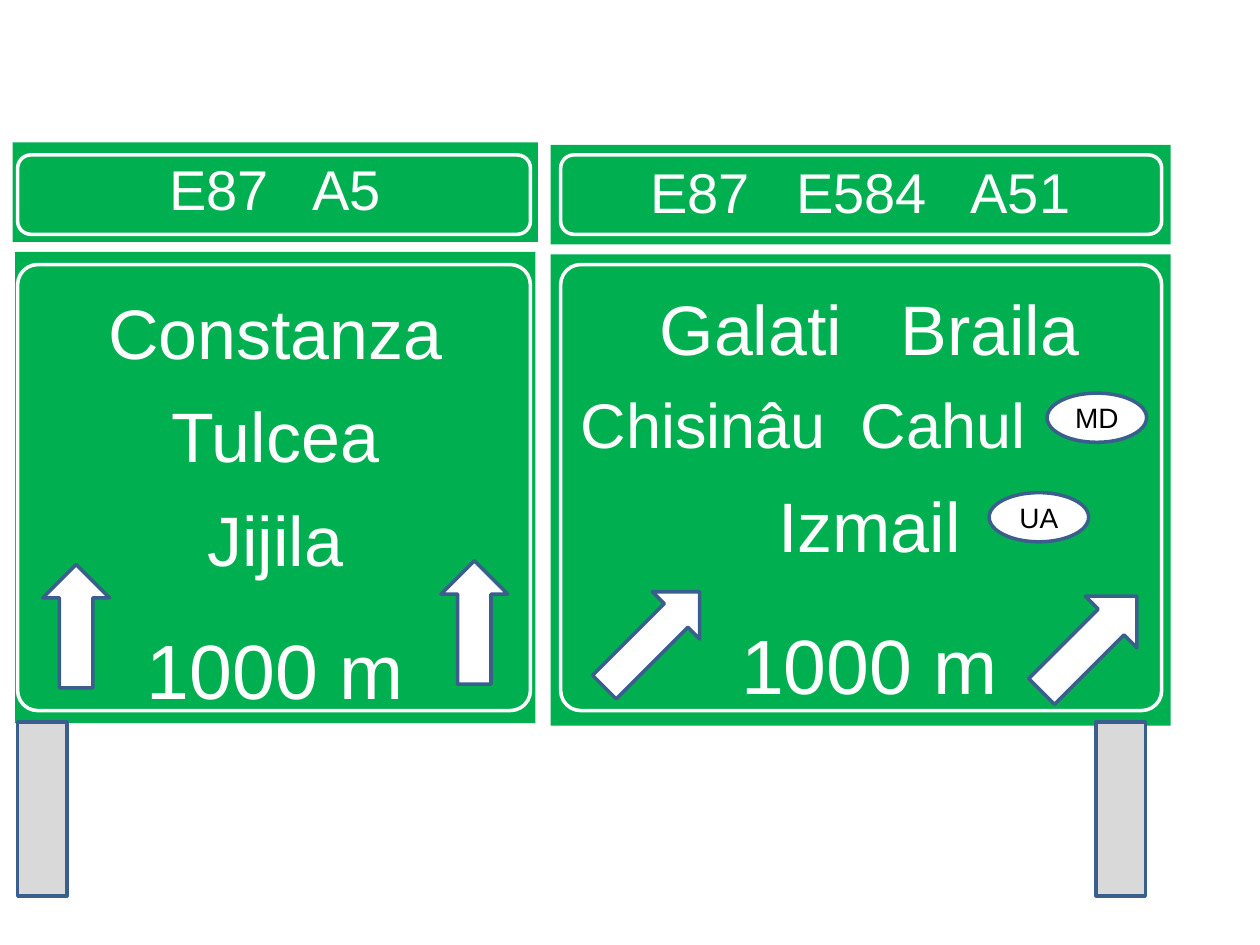
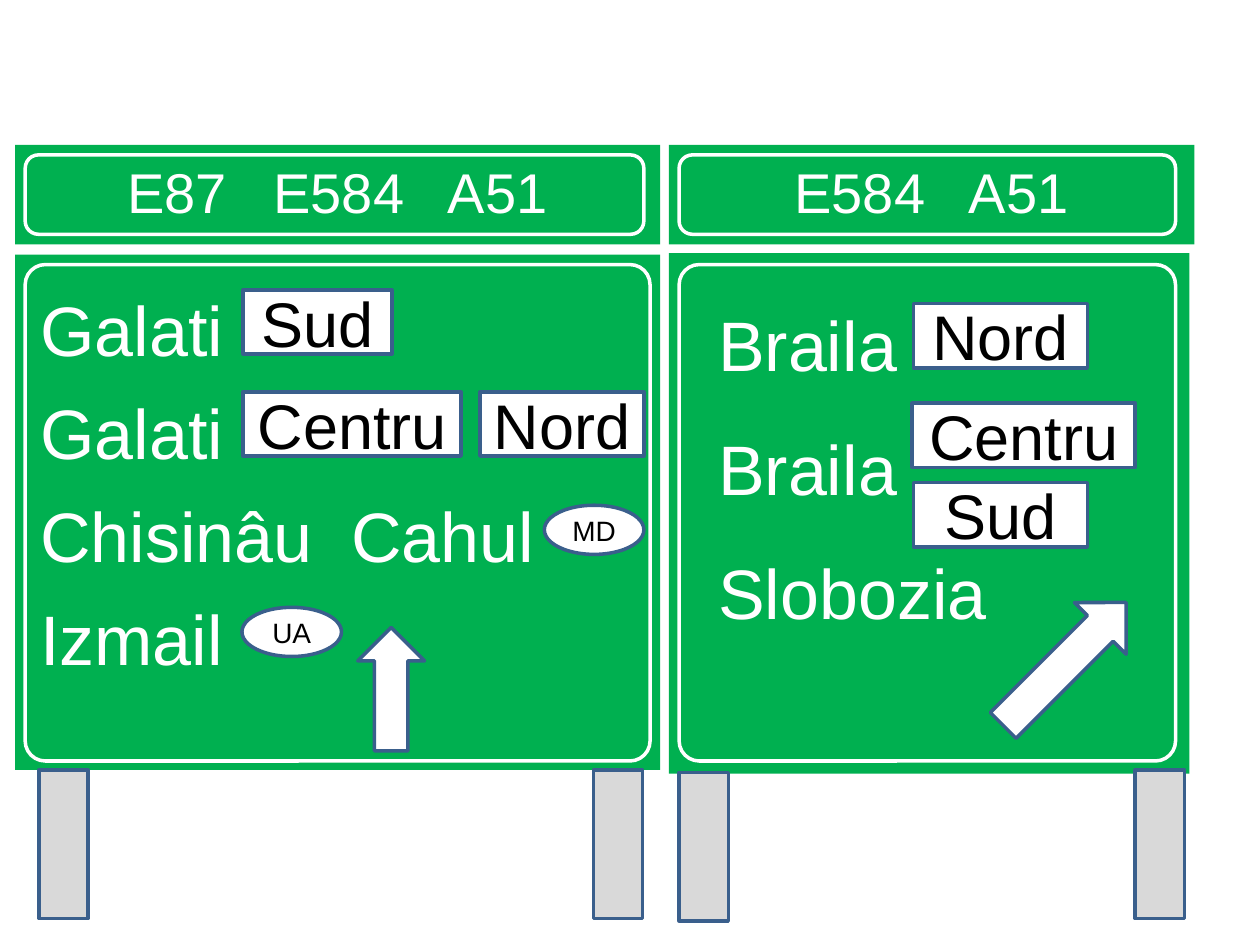
from dataclasses import dataclass

from pptx import Presentation
from pptx.dml.color import RGBColor
from pptx.enum.shapes import MSO_SHAPE as Preset
from pptx.enum.text import MSO_ANCHOR as Anchor, PP_ALIGN as Align
from pptx.util import Inches, Pt


@dataclass(frozen=True)
class Theme:
    green: str = "00B050"
    white: str = "FFFFFF"
    black: str = "000000"
    post: str = "D9D9D9"
    outline: str = "3A5F8C"
    font: str = "Arial"
    route_size: int = 32
    place_size: int = 40
    small_place_size: int = 36
    distance_size: int = 44
    district_size: int = 36
    country_size: int = 16
    line_width: int = 2
    corner_radius: float = 0.16


@dataclass(frozen=True)
class Box:
    left: float
    top: float
    width: float
    height: float

    def inner(self, left, top, width, height):
        """Return a box whose position is measured from this one."""
        return Box(self.left + left, self.top + top, width, height)


@dataclass(frozen=True)
class Line:
    text: str
    size: int = 40
    before: float = 0
    align: Align = Align.CENTER


THEME = Theme()
ROUTE_HEIGHT = 0.79
ROUTE_FRAME_HEIGHT = 0.63
POST_WIDTH = 0.39


def add_preset(slide, preset, box, fill=None, line=None):
    shape = slide.shapes.add_shape(
        preset, Inches(box.left), Inches(box.top), Inches(box.width), Inches(box.height))
    shape.shadow.inherit = False
    if fill:
        shape.fill.solid()
        shape.fill.fore_color.rgb = RGBColor.from_string(fill)
    else:
        shape.fill.background()
    if line:
        shape.line.color.rgb = RGBColor.from_string(line)
        shape.line.width = Pt(THEME.line_width)
    else:
        shape.line.fill.background()
    return shape


def write_lines(shape, lines, color, anchor, insets=(0, 0, 0, 0)):
    frame = shape.text_frame
    frame.word_wrap = True
    frame.vertical_anchor = anchor
    (frame.margin_left, frame.margin_top,
     frame.margin_right, frame.margin_bottom) = map(Inches, insets)
    for index, line in enumerate(lines):
        paragraph = frame.add_paragraph() if index else frame.paragraphs[0]
        paragraph.alignment = line.align
        paragraph.space_before = Pt(line.before)
        run = paragraph.add_run()
        run.text = line.text
        run.font.name = THEME.font
        run.font.size = Pt(line.size)
        run.font.color.rgb = RGBColor.from_string(color)


def add_frame(slide, box, radius=None):
    """Draw the rounded white border of a plate."""
    frame = add_preset(slide, Preset.ROUNDED_RECTANGLE, box, line=THEME.white)
    if radius:
        frame.adjustments[0] = radius / min(box.width, box.height)


def add_route_plate(slide, box, frame_left, frame_top, frame_width, routes):
    plate = add_preset(slide, Preset.RECTANGLE, box, THEME.green)
    write_lines(plate, [Line(routes, THEME.route_size)], THEME.white,
                Anchor.BOTTOM, (0.1, 0.05, 0.1, 0.16))
    add_frame(slide, box.inner(frame_left, frame_top, frame_width, ROUTE_FRAME_HEIGHT))


def add_direction_plate(slide, box, frame, lines, left_inset, top_inset):
    plate = add_preset(slide, Preset.RECTANGLE, box, THEME.green)
    write_lines(plate, lines, THEME.white, Anchor.TOP, (left_inset, top_inset, 0.1, 0))
    add_frame(slide, box.inner(*frame), THEME.corner_radius)


def add_outlined(slide, preset, box, fill=THEME.white):
    return add_preset(slide, preset, box, fill, THEME.outline)


def add_up_arrow(slide, plate, left, top):
    add_outlined(slide, Preset.UP_ARROW, plate.inner(left, top, 0.53, 0.98))


def add_exit_arrow(slide, plate, left, top, width, height):
    arrow = add_outlined(slide, Preset.RIGHT_ARROW, plate.inner(left, top, width, height))
    arrow.rotation = 315


def add_country(slide, plate, left, top, code):
    badge = add_outlined(slide, Preset.OVAL, plate.inner(left, top, 0.79, 0.39))
    write_lines(badge, [Line(code, THEME.country_size)], THEME.black, Anchor.MIDDLE)


def add_district(slide, plate, left, top, width, name):
    label = add_outlined(slide, Preset.RECTANGLE, plate.inner(left, top, width, 0.51))
    write_lines(label, [Line(name, THEME.district_size)], THEME.black, Anchor.MIDDLE)


def add_post(slide, plate, left, top, height):
    add_outlined(slide, Preset.RECTANGLE,
                 plate.inner(left, top, POST_WIDTH, height), THEME.post)


def add_constanza_sign(slide, plate):
    add_route_plate(slide, plate.inner(-0.02, -0.87, 4.17, ROUTE_HEIGHT),
                    0.04, 0.1, 4.07, "E87   A5")
    places = [Line(name, THEME.place_size, 11 if index else 0)
              for index, name in enumerate(("Constanza", "Tulcea", "Jijila"))]
    add_direction_plate(slide, plate, (0.02, 0.1, 4.07, 3.54),
                        places + [Line("1000 m", THEME.distance_size, 24)], 0.1, 0.3)
    add_up_arrow(slide, plate, 0.22, 2.48)
    add_up_arrow(slide, plate, 3.38, 2.45)
    add_post(slide, plate, 0.02, 3.73, 1.38)


def add_galati_braila_sign(slide, plate):
    add_route_plate(slide, plate.inner(0, -0.87, plate.width, ROUTE_HEIGHT),
                    0.08, 0.08, 4.77, "E87   E584   A51")
    lines = [
        Line("Galati   Braila", THEME.place_size),
        Line("Chisinâu  Cahul", THEME.small_place_size, 9, Align.LEFT),
        Line("Izmail", THEME.place_size, 12),
        Line("1000 m", THEME.distance_size, 29),
    ]
    add_direction_plate(slide, plate, (0.08, 0.08, 4.77, 3.54), lines, 0.24, 0.25)
    add_exit_arrow(slide, plate, 0.27, 2.79, 1.07, 0.53)
    add_exit_arrow(slide, plate, 3.74, 2.8, 1.07, 0.58)
    add_country(slide, plate, 3.94, 1.1, "MD")
    add_country(slide, plate, 3.48, 1.89, "UA")
    add_post(slide, plate, 4.33, 3.71, 1.38)


def add_galati_sign(slide, plate):
    add_route_plate(slide, plate.inner(0, -0.87, plate.width, ROUTE_HEIGHT),
                    0.08, 0.08, 4.91, "E87   E584   A51")
    names = ("Galati", "Galati", "Chisinâu  Cahul", "Izmail")
    lines = [Line(name, THEME.place_size, 11 if index else 0, Align.LEFT)
             for index, name in enumerate(names)]
    add_direction_plate(slide, plate, (0.08, 0.08, 4.96, 3.94), lines, 0.2, 0.25)
    add_district(slide, plate, 1.81, 0.28, 1.18, "Sud")
    add_district(slide, plate, 1.81, 1.09, 1.73, "Centru")
    add_district(slide, plate, 3.69, 1.09, 1.3, "Nord")
    add_country(slide, plate, 4.2, 1.99, "MD")
    add_country(slide, plate, 1.8, 2.8, "UA")
    add_up_arrow(slide, plate, 2.72, 2.96)
    for left in (0.19, 4.59):
        add_post(slide, plate, left, plate.height, 1.18)


def add_braila_sign(slide, plate):
    add_route_plate(slide, plate.inner(0, -0.86, 4.17, ROUTE_HEIGHT),
                    0.08, 0.08, 3.94, "E584   A51")
    lines = [Line(name, THEME.place_size, 23 if index else 0, Align.LEFT)
             for index, name in enumerate(("Braila", "Braila", "Slobozia"))]
    add_direction_plate(slide, plate, (0.08, 0.09, 3.94, 3.94), lines, 0.39, 0.38)
    add_district(slide, plate, 1.94, 0.4, 1.38, "Nord")
    add_district(slide, plate, 1.93, 1.19, 1.77, "Centru")
    add_district(slide, plate, 1.94, 1.82, 1.38, "Sud")
    add_exit_arrow(slide, plate, 2.45, 2.97, 1.38, 0.58)
    add_post(slide, plate, 0.08, 4.12, 1.18)
    add_post(slide, plate, 3.7, 4.1, 1.18)


def main():
    presentation = Presentation()
    presentation.slide_width = Inches(10)
    presentation.slide_height = Inches(7.5)
    blank_layout = presentation.slide_layouts[6]

    advance_slide = presentation.slides.add_slide(blank_layout)
    add_constanza_sign(advance_slide, Box(0.12, 2, 4.13, 3.74))
    add_galati_braila_sign(advance_slide, Box(4.37, 2.02, 4.92, 3.74))

    exit_slide = presentation.slides.add_slide(blank_layout)
    add_galati_sign(exit_slide, Box(0.12, 2.02, 5.12, 4.09))
    add_braila_sign(exit_slide, Box(5.31, 2.01, 4.13, 4.13))

    presentation.save("out.pptx")


if __name__ == "__main__":
    main()
